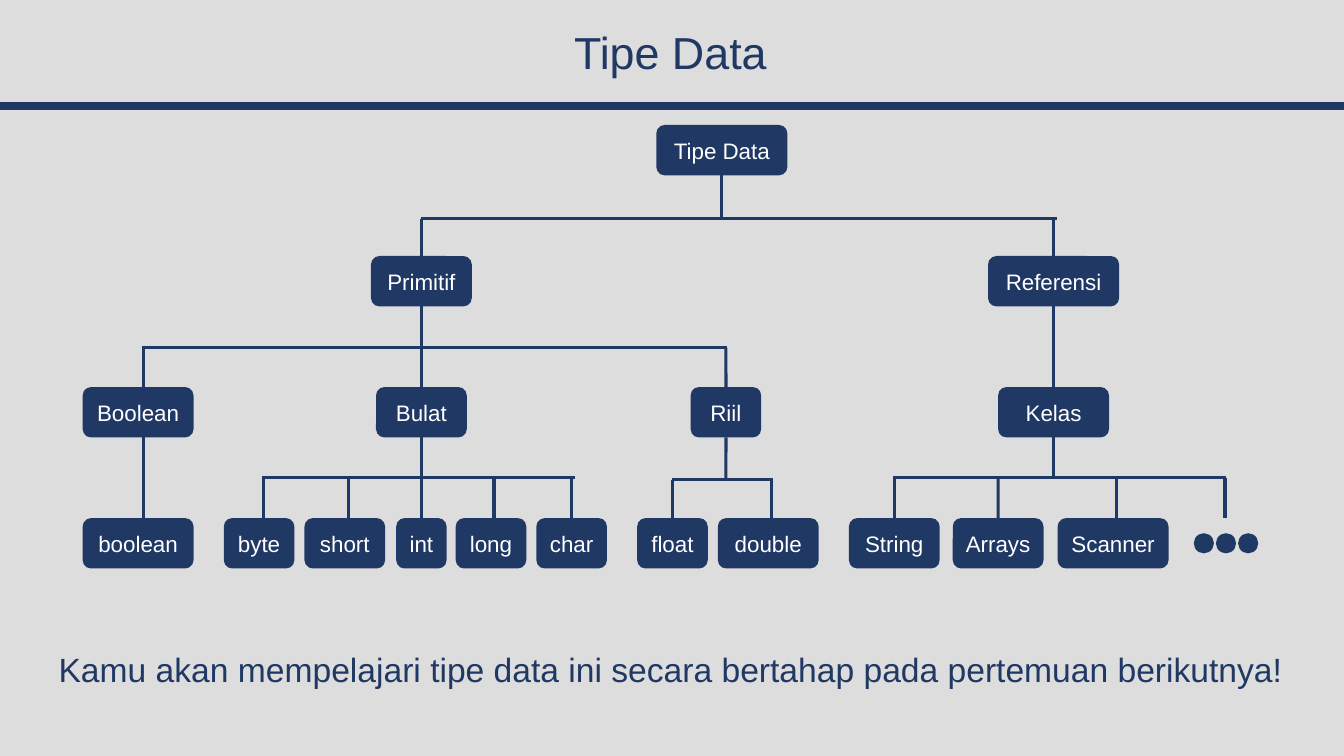
from lxml import etree
from pptx import Presentation
from pptx.dml.color import RGBColor
from pptx.enum import shapes, text
from pptx.oxml import ns
from pptx.util import Inches, Pt

NAVY = RGBColor(0x20, 0x38, 0x64)
WHITE = RGBColor(0xFF, 0xFF, 0xFF)
GREY = RGBColor(0xDD, 0xDD, 0xDD)
BOX_HEIGHT = 0.5
ROOT_TOP, KIND_TOP, GROUP_TOP, LEAF_TOP = 1.24, 2.54, 3.84, 5.14


def write(shape, content, size=16, color=WHITE, spacing=1.0,
          anchor=text.MSO_ANCHOR.MIDDLE, wrap=True):
    frame = shape.text_frame
    frame.word_wrap = wrap
    frame.vertical_anchor = anchor
    para = frame.paragraphs[0]
    para.alignment = text.PP_ALIGN.CENTER
    para.line_spacing = spacing
    span = para.add_run()
    span.text = content
    span.font.name = "Arial"
    span.font.size = Pt(size)
    span.font.color.rgb = color


def draw_line(x1, y1, x2, y2, width=2.25, upper=None, lower=None):
    line = page.shapes.add_connector(
        shapes.MSO_CONNECTOR.STRAIGHT,
        Inches(x1), Inches(y1), Inches(x2), Inches(y2))
    line.line.color.rgb = NAVY
    line.line.width = Pt(width)
    etree.SubElement(line._element.spPr, ns.qn("a:effectLst"))
    if upper is not None:
        line.begin_connect(upper, 2)
    if lower is not None:
        line.end_connect(lower, 0)


deck = Presentation()
deck.slide_width, deck.slide_height = Inches(13.33), Inches(7.5)
page = deck.slides.add_slide(deck.slide_layouts[6])
page.background.fill.solid()
page.background.fill.fore_color.rgb = GREY

# Title, rule and closing sentence
draw_line(0, 1.05, 13.33, 1.05, width=6)
title = page.shapes.add_textbox(Inches(0.4), Inches(0.2), Inches(12.5), Inches(0.7))
write(title, "Tipe Data", size=32, color=NAVY, spacing=0.9)
closing = page.shapes.add_textbox(Inches(0.4), Inches(6.31), Inches(12.5), Inches(0.62))
write(closing, "Kamu akan mempelajari tipe data ini secara bertahap pada pertemuan berikutnya!",
      size=24, color=NAVY, spacing=1.2, anchor=text.MSO_ANCHOR.TOP)

# Boxes of the tree: level top, then label, left and width
levels = [
    (ROOT_TOP, [("Tipe Data", 6.51, 1.3)]),
    (KIND_TOP, [("Primitif", 3.68, 1), ("Referensi", 9.8, 1.3)]),
    (GROUP_TOP, [("Boolean", 0.82, 1.1), ("Bulat", 3.73, 0.9),
                 ("Riil", 6.85, 0.7), ("Kelas", 9.9, 1.1)]),
    (LEAF_TOP, [("boolean", 0.82, 1.1), ("byte", 2.22, 0.7), ("short", 3.02, 0.8),
                ("int", 3.93, 0.5), ("long", 4.52, 0.7), ("char", 5.32, 0.7),
                ("float", 6.32, 0.7), ("double", 7.12, 1), ("String", 8.42, 0.9),
                ("Arrays", 9.45, 0.9), ("Scanner", 10.49, 1.1)]),
]
boxes, centers = {}, {}
for top, row in levels:
    for label, left, width in row:
        box = page.shapes.add_shape(
            shapes.MSO_SHAPE.ROUNDED_RECTANGLE,
            Inches(left), Inches(top), Inches(width), Inches(BOX_HEIGHT))
        box.shadow.inherit = False
        box.fill.solid()
        box.fill.fore_color.rgb = NAVY
        box.line.fill.background()
        write(box, label, wrap=False)
        boxes[label], centers[label] = box, left + width / 2

# Dots standing for further classes
for step in range(3):
    dot = page.shapes.add_shape(
        shapes.MSO_SHAPE.OVAL, Inches(11.84 + 0.22 * step), Inches(5.29),
        Inches(0.2), Inches(0.2))
    dot.shadow.inherit = False
    dot.fill.solid()
    dot.fill.fore_color.rgb = NAVY
    dot.line.fill.background()

# Branches: parent, its bottom, bar height and ends, children's top,
# and each child with the x of its line
branches = [
    ("Tipe Data", ROOT_TOP, 2.17, 4.18, 10.48, KIND_TOP,
     [("Primitif", 4.18), ("Referensi", 10.45)]),
    ("Primitif", KIND_TOP, 3.45, 1.41, 7.21, GROUP_TOP,
     [("Boolean", 1.42), ("Bulat", 4.18), ("Riil", 7.2)]),
    ("Bulat", GROUP_TOP, 4.74, 2.6, 5.7, LEAF_TOP,
     [("byte", 2.61), ("short", 3.46), ("int", 4.18), ("long", 4.9), ("char", 5.69)]),
    ("Riil", GROUP_TOP, 4.76, 6.67, 7.67, LEAF_TOP,
     [("float", 6.68), ("double", 7.65)]),
    ("Kelas", GROUP_TOP, 4.74, 8.86, 12.16, LEAF_TOP,
     [("String", 8.87), ("Arrays", 9.91), ("Scanner", 11.07), ("dots", 12.15)]),
]
for parent, top, bar, start, end, child_top, children in branches:
    stem = centers[parent]
    draw_line(start, bar, end, bar)
    draw_line(stem, top + BOX_HEIGHT, stem, bar, upper=boxes[parent])
    for child, x in children:
        # Lines that meet the middle of a box are joined to it
        centered = abs(x - centers.get(child, 0)) < 0.025
        x = centers[child] if centered else x
        draw_line(x, bar, x, child_top, lower=boxes[child] if centered else None)

# Parents with a single child
draw_line(1.42, GROUP_TOP + BOX_HEIGHT, 1.42, LEAF_TOP)
draw_line(centers["Referensi"], KIND_TOP + BOX_HEIGHT, centers["Kelas"], GROUP_TOP,
          upper=boxes["Referensi"], lower=boxes["Kelas"])

deck.save("out.pptx")
